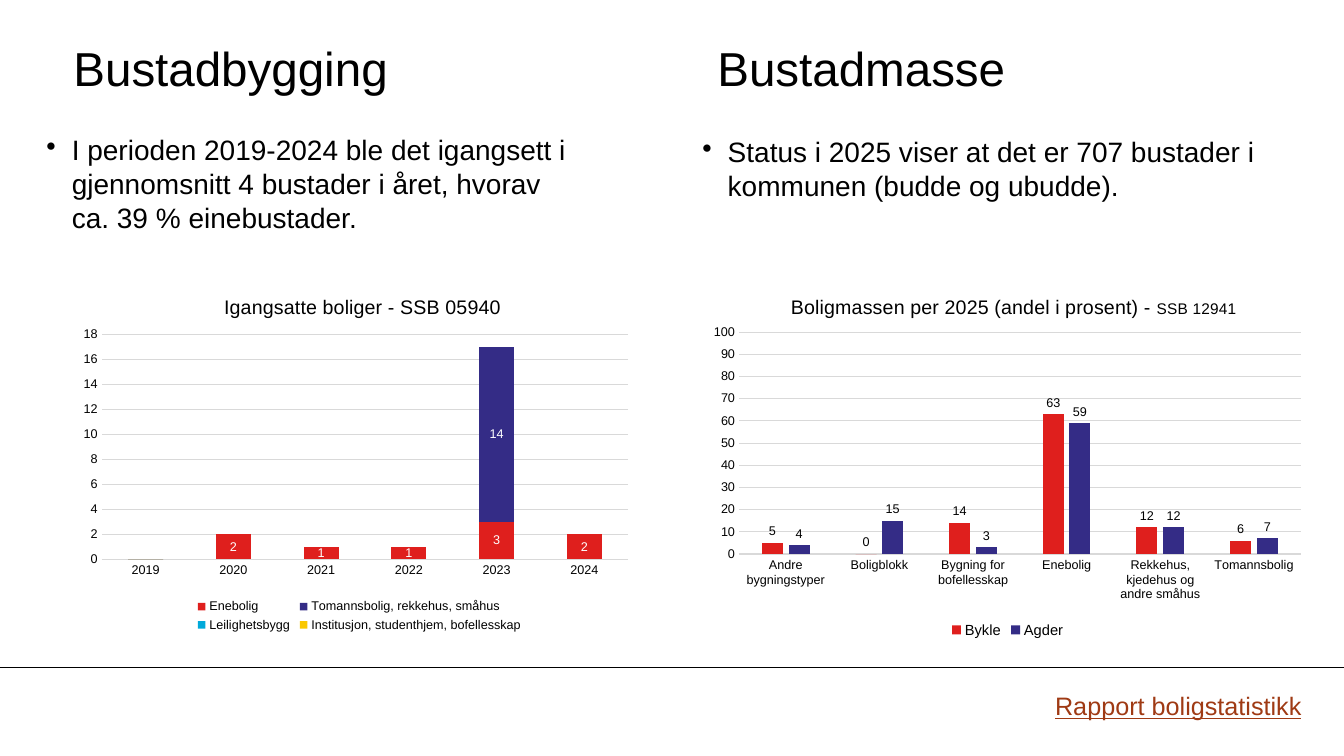
from lxml.etree import SubElement
from pptx import Presentation
from pptx.chart.data import CategoryChartData
from pptx.dml.color import RGBColor
from pptx.enum.chart import XL_CHART_TYPE, XL_LABEL_POSITION, XL_LEGEND_POSITION, XL_TICK_MARK
from pptx.enum.shapes import MSO_CONNECTOR
from pptx.enum.text import MSO_ANCHOR, PP_ALIGN
from pptx.oxml.ns import qn
from pptx.util import Cm, Pt

BLACK, WHITE, GREY, LINK = "000000", "FFFFFF", "D9D9D9", "9F3A14"
SERIES_COLORS = ["DF1F1D", "342C86", "00A9DA", "FAC800"]


def style(font, size, color=BLACK):
    font.name, font.size, font.bold = "Arial", Pt(size), False
    font.color.rgb = RGBColor.from_string(color)


def set_layout(element, index, **fractions):
    """Place a chart part by fractions of the chart area, as child number index."""
    for old in element.findall(qn("c:layout")):
        element.remove(old)
    layout = element.makeelement(qn("c:layout"))
    manual = SubElement(layout, qn("c:manualLayout"))
    if element.tag == qn("c:plotArea"):
        SubElement(manual, qn("c:layoutTarget")).set("val", "inner")
    for mode in ("xMode", "yMode"):
        SubElement(manual, qn(f"c:{mode}")).set("val", "edge")
    for name, value in fractions.items():
        SubElement(manual, qn(f"c:{name}")).set("val", str(value))
    element.insert(index, layout)


deck = Presentation()
deck.slide_width, deck.slide_height = Cm(33.87), Cm(19.05)
page = deck.slides.add_slide(deck.slide_layouts[5])

divider = page.shapes.add_connector(MSO_CONNECTOR.STRAIGHT, 0, Cm(16.81), deck.slide_width, Cm(16.81))
divider.line.color.rgb = RGBColor.from_string(BLACK)
divider.line.width = Pt(0.75)
SubElement(divider._element.spPr, qn("a:effectLst"))

# Headings
second_heading = page.shapes.add_textbox(0, 0, 0, 0)
for box, left, words in [
    (page.shapes.title, 1.85, "Bustadbygging"),
    (second_heading, 18.08, "Bustadmasse"),
]:
    box.left, box.top, box.width, box.height = Cm(left), Cm(0.74), Cm(12.62), Cm(1.9)
    frame = box.text_frame
    frame.text = words
    frame.word_wrap = True
    frame.vertical_anchor = MSO_ANCHOR.MIDDLE
    frame.margin_left = frame.margin_right = frame.margin_top = frame.margin_bottom = 0
    frame.paragraphs[0].alignment = PP_ALIGN.LEFT
    style(frame.paragraphs[0].font, 34)

# Bullet points
for left, top, width, height, words in [
    (1.17, 3.35, 15.24, 2.82,
     "I perioden 2019-2024 ble det igangsett i gjennomsnitt 4 bustader i året, hvorav\vca. 39 % einebustader."),
    (17.7, 3.4, 14.88, 2.13,
     "Status i 2025 viser at det er 707 bustader i kommunen (budde og ubudde)."),
]:
    frame = page.shapes.add_textbox(Cm(left), Cm(top), Cm(width), Cm(height)).text_frame
    frame.word_wrap = True
    frame.margin_left = frame.margin_right = frame.margin_top = frame.margin_bottom = 0
    paragraph = frame.paragraphs[0]
    paragraph.text = words
    paragraph.line_spacing = Pt(24)
    properties = paragraph._p.get_or_add_pPr()
    properties.set("marL", str(Cm(0.64)))
    properties.set("indent", str(-Cm(0.64)))
    SubElement(properties, qn("a:buChar")).set("char", "•")
    style(paragraph.font, 20)

report = page.shapes.add_textbox(Cm(26.34), Cm(17.27), Cm(6.73), Cm(1.02))
paragraph = report.text_frame.paragraphs[0]
paragraph.text = "Rapport boligstatistikk"
style(paragraph.font, 18, LINK)
paragraph.font.underline = True

# Charts
charts = [
    dict(
        kind=XL_CHART_TYPE.COLUMN_STACKED, at=(1.85, 6.88, 14.27, 9.14),
        title=[("Igangsatte boliger - SSB 05940", 14)],
        categories=["2019", "2020", "2021", "2022", "2023", "2024"],
        series={
            "Enebolig": (0, 2, 1, 1, 3, 2),
            "Tomannsbolig, rekkehus, småhus": (0, 0, 0, 0, 14, 0),
            "Leilighetsbygg": (0,) * 6,
            "Institusjon, studenthjem, bofellesskap": (0,) * 6,
        },
        gap=150, overlap=100, top=18, step=2, legend_size=9,
        label_color=WHITE, label_format="0;;", label_place=XL_LABEL_POSITION.CENTER,
        title_at=dict(x=0.26, y=0.05),
        plot_at=dict(x=0.05, y=0.17, w=0.93, h=0.62),
        legend_at=dict(x=0.21, y=0.89, w=0.59, h=0.11),
    ),
    dict(
        kind=XL_CHART_TYPE.COLUMN_CLUSTERED, at=(17.7, 6.88, 15.39, 9.32),
        title=[("Boligmassen per 2025 (andel i prosent) - ", 14), ("SSB 12941", 11)],
        categories=["Andre bygningstyper", "Boligblokk", "Bygning for bofellesskap",
                    "Enebolig", "Rekkehus, kjedehus og andre småhus", "Tomannsbolig"],
        series={"Bykle": (5, 0, 14, 63, 12, 6), "Agder": (4, 15, 3, 59, 12, 7)},
        gap=219, overlap=-27, top=100, step=10, legend_size=10.5,
        label_color=BLACK, label_format="0", label_place=XL_LABEL_POSITION.OUTSIDE_END,
        title_at=dict(x=0.14, y=0.05),
        plot_at=dict(x=0.06, y=0.16, w=0.92, h=0.6),
        legend_at=dict(x=0.4, y=0.93, w=0.2, h=0.07),
    ),
]
for item in charts:
    data = CategoryChartData()
    data.categories = item["categories"]
    for name, values in item["series"].items():
        data.add_series(name, values)
    chart = page.shapes.add_chart(item["kind"], *map(Cm, item["at"]), data).chart
    style(chart.font, 10)

    chart.has_title = True
    title_paragraph = chart.chart_title.text_frame.paragraphs[0]
    for words, size in item["title"]:
        span = title_paragraph.add_run()
        span.text = words
        style(span.font, size)

    chart.has_legend = True
    chart.legend.position = XL_LEGEND_POSITION.BOTTOM
    chart.legend.include_in_layout = False
    style(chart.legend.font, item["legend_size"])

    for axis in (chart.category_axis, chart.value_axis):
        axis.major_tick_mark = axis.minor_tick_mark = XL_TICK_MARK.NONE
        style(axis.tick_labels.font, 9)
    chart.value_axis.minimum_scale = 0
    chart.value_axis.maximum_scale = item["top"]
    chart.value_axis.major_unit = item["step"]
    chart.value_axis.format.line.fill.background()
    chart.value_axis.has_major_gridlines = True
    for rule in (chart.category_axis.format.line, chart.value_axis.major_gridlines.format.line):
        rule.color.rgb = RGBColor.from_string(GREY)
        rule.width = Pt(0.75)

    plot = chart.plots[0]
    plot.gap_width, plot.overlap, plot.vary_by_categories = item["gap"], item["overlap"], False
    for series, color in zip(plot.series, SERIES_COLORS):
        series.format.fill.solid()
        series.format.fill.fore_color.rgb = RGBColor.from_string(color)
        if any(series.values):
            labels = series.data_labels
            labels.show_value = True
            labels.number_format, labels.number_format_is_linked = item["label_format"], False
            labels.position = item["label_place"]
            style(labels.font, 9, item["label_color"])

    root = chart.element.find(qn("c:chart"))
    set_layout(root.find(qn("c:title")), 1, **item["title_at"])
    set_layout(root.find(qn("c:plotArea")), 0, **item["plot_at"])
    set_layout(root.find(qn("c:legend")), 1, **item["legend_at"])

deck.save("out.pptx")
